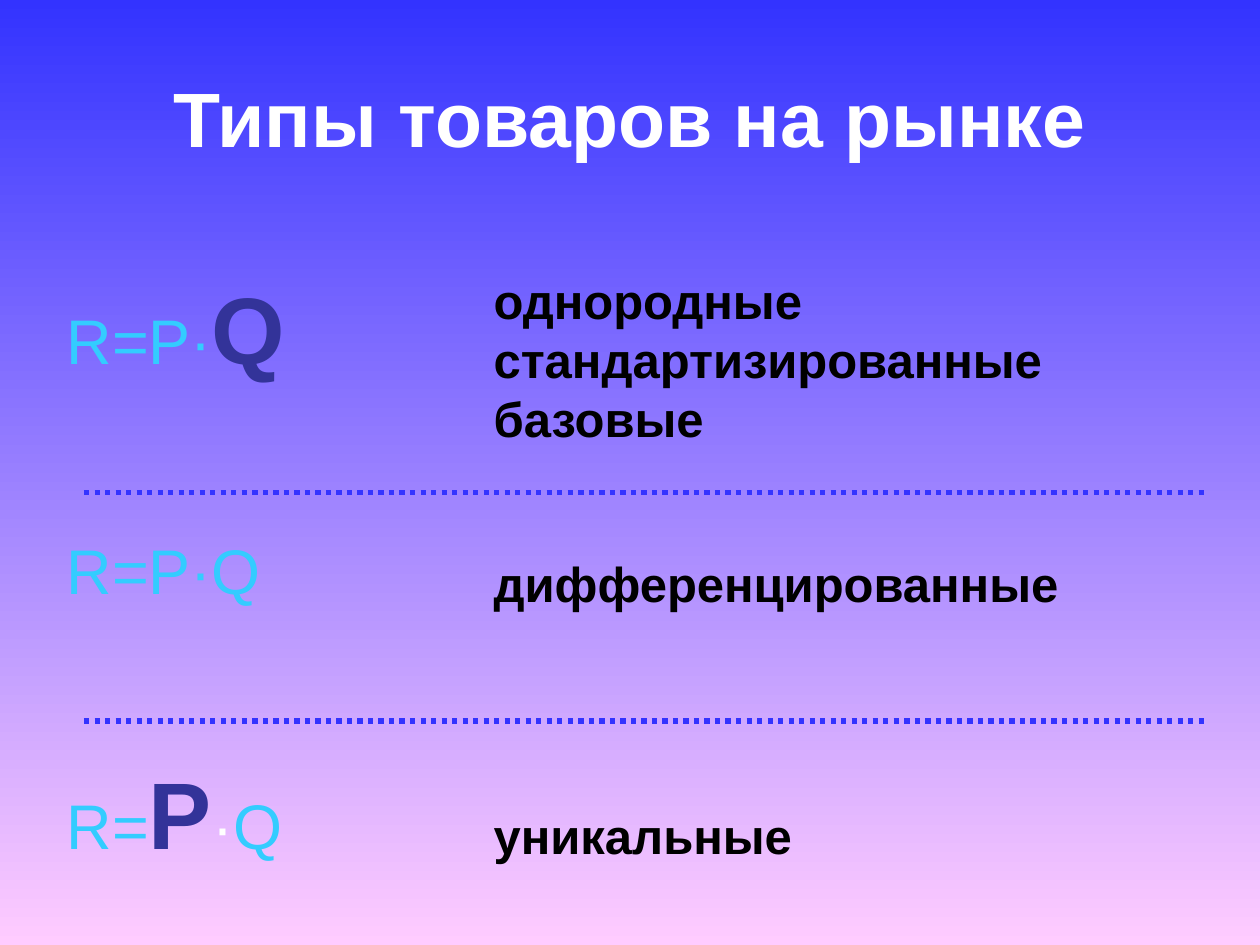
from dataclasses import dataclass

from lxml.etree import SubElement
from pptx import Presentation
from pptx.dml.color import RGBColor as Rgb
from pptx.enum.dml import MSO_LINE_DASH_STYLE as Dash
from pptx.enum.shapes import MSO_CONNECTOR as Connector
from pptx.enum.text import MSO_ANCHOR as Anchor, MSO_AUTO_SIZE as AutoSize, PP_ALIGN as Align
from pptx.oxml.ns import qn
from pptx.util import Pt


@dataclass(frozen=True)
class Theme:
    """Colours, font and type sizes of the slide."""
    font: str = "Arial"
    sky: Rgb = Rgb(0x33, 0xCC, 0xFF)
    navy: Rgb = Rgb(0x33, 0x33, 0x99)
    blue: Rgb = Rgb(0x33, 0x33, 0xFF)
    pink: Rgb = Rgb(0xFF, 0xCC, 0xFF)
    white: Rgb = Rgb(0xFF, 0xFF, 0xFF)
    black: Rgb = Rgb(0, 0, 0)
    title_size: int = 44
    formula_size: int = 36
    stress_size: int = 54
    label_size: int = 28


THEME = Theme()
TITLE = (THEME.title_size, THEME.white, True)
PLAIN = (THEME.formula_size, THEME.sky, False)
PALE = (THEME.formula_size, THEME.white, False)
STRESS = (THEME.stress_size, THEME.navy, True)
LABEL = (THEME.label_size, THEME.black, True)

FORMULA_LEFT, LABEL_LEFT = 31, 275
RULE_LEFT, RULE_RIGHT = 48, 689
RULE_TOPS = (281.5, 412)
FORMULAS = (
    (151, 153, 72, [("R=P·", PLAIN), ("Q", STRESS)]),
    (300, 130, 50, [("R=P·Q", PLAIN)]),
    (428, 179, 72, [("R=", PLAIN), ("P", STRESS), ("·", PALE), ("Q", PLAIN)]),
)
LABELS = (
    (151, 363, 108, ["однородные", "стандартизированные", "базовые"]),
    (313, 351, 41, ["дифференцированные"]),
    (457, 287, 41, ["уникальные"]),
)


def paint_background(slide):
    """Fill the background with a gradient running downwards."""
    fill = slide.background.fill
    fill.gradient()
    fill.gradient_angle = 270
    for stop, color in zip(fill.gradient_stops, (THEME.blue, THEME.pink)):
        stop.color.rgb = color


def add_text(slide, left, top, width, height, lines):
    """Add a text box whose lines are lists of (text, style) pieces."""
    box = slide.shapes.add_textbox(Pt(left), Pt(top), Pt(width), Pt(height))
    frame = box.text_frame
    frame.word_wrap = True
    frame.auto_size = AutoSize.SHAPE_TO_FIT_TEXT
    for number, pieces in enumerate(lines):
        paragraph = frame.add_paragraph() if number else frame.paragraphs[0]
        for text, (size, color, bold) in pieces:
            run = paragraph.add_run()
            run.text = text
            run.font.name = THEME.font
            run.font.size = Pt(size)
            run.font.bold = bold
            run.font.color.rgb = color
    return frame


def add_title(slide, text):
    """Add the centred slide title."""
    frame = add_text(slide, 36, 21.6, 648, 90, [[(text, TITLE)]])
    frame.auto_size = AutoSize.NONE
    frame.vertical_anchor = Anchor.MIDDLE
    frame.paragraphs[0].alignment = Align.CENTER


def add_rule(slide, top):
    """Add a dotted rule between two types of goods."""
    rule = slide.shapes.add_connector(
        Connector.STRAIGHT, Pt(RULE_LEFT), Pt(top), Pt(RULE_RIGHT), Pt(top))
    rule.line.color.rgb = THEME.blue
    rule.line.width = Pt(3)
    rule.line.dash_style = Dash.ROUND_DOT
    SubElement(rule._element.spPr, qn("a:effectLst"))


def main():
    """Build and save the slide."""
    deck = Presentation()
    deck.slide_width, deck.slide_height = Pt(720), Pt(540)
    slide = deck.slides.add_slide(deck.slide_layouts[6])
    paint_background(slide)
    add_title(slide, "Типы товаров на рынке")
    for top, width, height, pieces in FORMULAS:
        add_text(slide, FORMULA_LEFT, top, width, height, [pieces])
    for top, width, height, kinds in LABELS:
        add_text(slide, LABEL_LEFT, top, width, height, [[(kind, LABEL)] for kind in kinds])
    for top in RULE_TOPS:
        add_rule(slide, top)
    deck.save("out.pptx")


if __name__ == "__main__":
    main()
